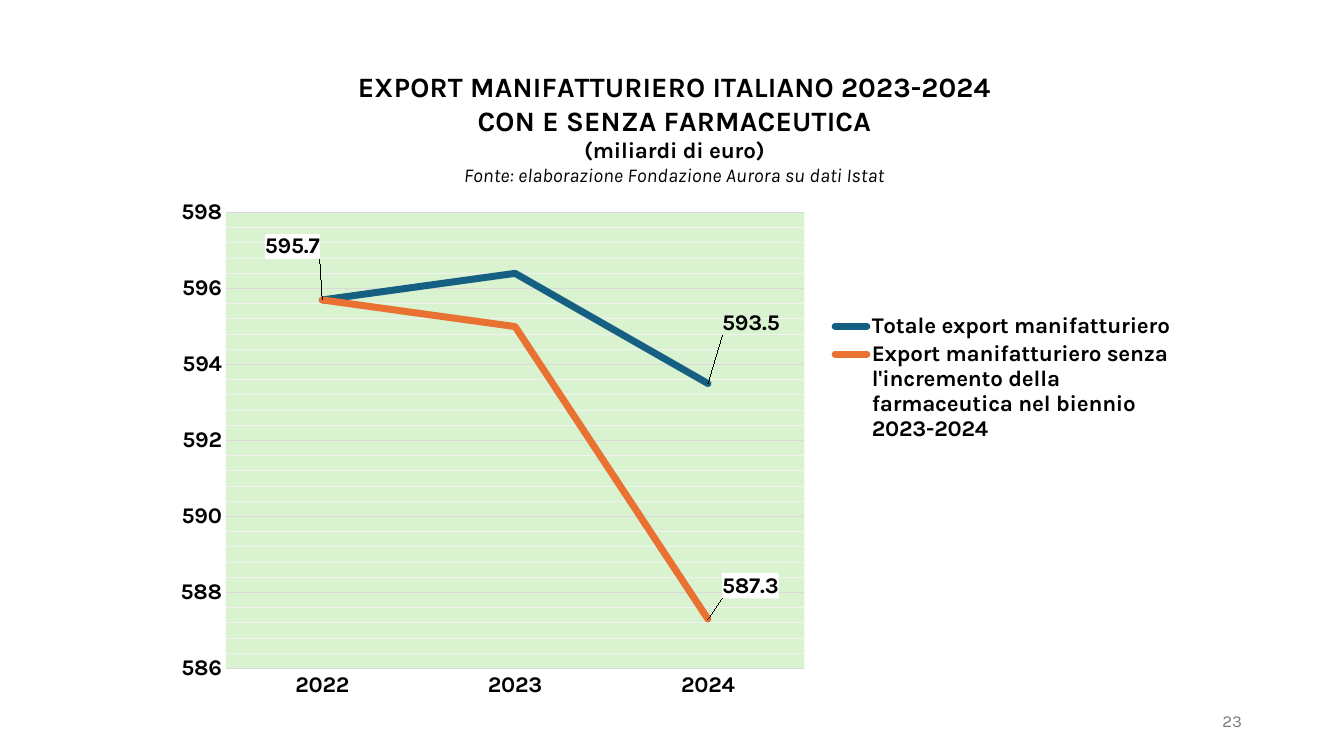
from lxml.etree import SubElement
from pptx import Presentation
from pptx.chart.data import CategoryChartData
from pptx.dml.color import RGBColor
from pptx.enum.chart import XL_CHART_TYPE, XL_LEGEND_POSITION, XL_TICK_MARK
from pptx.enum.text import MSO_ANCHOR, PP_ALIGN
from pptx.oxml import parse_xml
from pptx.oxml.ns import nsdecls, qn
from pptx.util import Cm, Pt

YEARS = ["2022", "2023", "2024"]
TITLE_LINES = [
    ("EXPORT MANIFATTURIERO ITALIANO 2023-2024", dict(size=20, bold=True)),
    ("CON E SENZA FARMACEUTICA", dict(size=20, bold=True)),
    ("(miliardi di euro)", dict(size=16, bold=True)),
    ("Fonte: elaborazione Fondazione Aurora su dati Istat", dict(size=14, italic=True)),
]
# Name, values, colour, labels as (point, horizontal shift, vertical shift, fill)
EXPORTS = [
    ("Totale export manifatturiero", [595.7, 596.4, 593.5], "156082",
     [(2, 0.01, -0.09, None)]),
    ("Export manifatturiero senza l'incremento della farmaceutica nel biennio 2023-2024",
     [595.7, 595.0, 587.3], "E97132",
     [(0, -0.06, -0.08, "FFFFFF"), (2, 0.01, -0.05, "FFFFFF")]),
]
LABEL_EXTENSION = "{CE6537A1-D6FC-4f65-9D91-7224C49458BB}"
C15 = 'xmlns:c15="http://schemas.microsoft.com/office/drawing/2012/chart"'


def colour(code):
    return RGBColor.from_string(code)


def style_font(font, size=16, bold=False, italic=False, code="000000", name="Karla"):
    font.name, font.size, font.bold, font.italic = name, Pt(size), bold, italic
    font.color.rgb = colour(code)


def write(para, text, align=PP_ALIGN.CENTER, **style):
    para.alignment = align
    span = para.add_run()
    span.text = text
    style_font(span.font, **style)


def style_line(line, code, width):
    line.color.rgb = colour(code)
    line.width = Pt(width)


def place(element, inner=False, **fractions):
    """Set a chart part's place as fractions of the chart area."""
    for old in element.findall(qn("c:layout")):
        element.remove(old)
    layout = parse_xml(f'<c:layout {nsdecls("c")}><c:manualLayout/></c:layout>')
    settings = {"layoutTarget": "inner"} if inner else {}
    settings.update(xMode="edge", yMode="edge", **fractions)
    for tag, value in settings.items():
        SubElement(layout[0], qn(f"c:{tag}")).set("val", str(value))
    overlay = element.find(qn("c:overlay"))
    if overlay is None:
        element.insert(0, layout)
    else:
        overlay.addprevious(layout)


def label_flags(show_value):
    shown = {"LegendKey": 0, "Val": show_value, "CatName": 0, "SerName": 0,
             "Percent": 0, "BubbleSize": 0}
    return "".join(f'<c:show{tag} val="{value}"/>' for tag, value in shown.items())


def label_xml(point, shift_x, shift_y, fill):
    paint = f'<a:solidFill><a:srgbClr val="{fill}"/></a:solidFill>' if fill else "<a:noFill/>"
    return (
        f'<c:dLbl><c:idx val="{point}"/><c:layout><c:manualLayout>'
        f'<c:x val="{shift_x}"/><c:y val="{shift_y}"/></c:manualLayout></c:layout>'
        f'<c:numFmt formatCode="0.0" sourceLinked="0"/><c:spPr>{paint}</c:spPr>'
        '<c:txPr><a:bodyPr/><a:p><a:pPr><a:defRPr sz="1600" b="1"><a:solidFill>'
        '<a:srgbClr val="000000"/></a:solidFill><a:latin typeface="Karla"/></a:defRPr>'
        f'</a:pPr></a:p></c:txPr><c:dLblPos val="r"/>{label_flags(1)}</c:dLbl>')


def add_labels(series, labels):
    """Label chosen points, joined to them by thin leader lines."""
    items = "".join(label_xml(*label) for label in labels)
    block = parse_xml(
        f'<c:dLbls {nsdecls("c", "a")}>{items}{label_flags(0)}<c:extLst>'
        f'<c:ext uri="{LABEL_EXTENSION}" {C15}><c15:showLeaderLines val="1"/>'
        '<c15:leaderLines><c:spPr><a:ln w="9525"><a:solidFill><a:srgbClr val="000000"/>'
        '</a:solidFill></a:ln></c:spPr></c15:leaderLines></c:ext></c:extLst></c:dLbls>')
    series._element.find(qn("c:cat")).addprevious(block)


class SlideBuilder:
    def __init__(self, deck):
        self.page = deck.slides.add_slide(deck.slide_layouts[6])

    def text(self, text, left, top, width, height, **style):
        box = self.page.shapes.add_textbox(Cm(left), Cm(top), Cm(width), Cm(height))
        box.text_frame.word_wrap = True
        box.text_frame.vertical_anchor = MSO_ANCHOR.MIDDLE
        write(box.text_frame.paragraphs[0], text, **style)

    def line_chart(self, left, top, width, height):
        data = CategoryChartData(number_format="0.0")
        data.categories = YEARS
        for name, values, *_ in EXPORTS:
            data.add_series(name, values)
        chart = self.page.shapes.add_chart(
            XL_CHART_TYPE.LINE, Cm(left), Cm(top), Cm(width), Cm(height), data).chart
        style_font(chart.font, size=10)
        self.chart_title(chart)
        self.axes(chart)
        self.lines(chart)
        self.legend(chart)

        # Plot area
        plot_area = chart._chartSpace.find(f'{qn("c:chart")}/{qn("c:plotArea")}')
        place(plot_area, inner=True, x=0.064, y=0.253, w=0.565, h=0.681)
        plot_area.append(parse_xml(
            f'<c:spPr {nsdecls("c", "a")}><a:solidFill><a:srgbClr val="D9F2D0"/>'
            '</a:solidFill><a:ln><a:noFill/></a:ln></c:spPr>'))

    def chart_title(self, chart):
        chart.has_title = True
        title = chart.chart_title
        frame = title.text_frame
        for number, (text, style) in enumerate(TITLE_LINES):
            para = frame.add_paragraph() if number else frame.paragraphs[0]
            write(para, text, **style)
        place(title._element, x=0.19, y=0.035)

    def axes(self, chart):
        for axis in (chart.category_axis, chart.value_axis):
            axis.major_tick_mark = axis.minor_tick_mark = XL_TICK_MARK.NONE
            style_font(axis.tick_labels.font, bold=True)
        style_line(chart.category_axis.format.line, "D9D9D9", 0.75)

        values = chart.value_axis
        values.minimum_scale, values.maximum_scale = 586, 598
        values.major_unit, values.minor_unit = 2, 0.4
        values.has_major_gridlines = values.has_minor_gridlines = True
        style_line(values.major_gridlines.format.line, "D9D9D9", 0.75)
        values._element.find(qn("c:minorGridlines")).append(parse_xml(
            f'<c:spPr {nsdecls("c", "a")}><a:ln w="9525"><a:solidFill>'
            '<a:srgbClr val="F2F2F2"/></a:solidFill></a:ln></c:spPr>'))
        values.format.line.fill.background()
        values.tick_labels.number_format = "#,##0"
        values.tick_labels.number_format_is_linked = False

    def lines(self, chart):
        plot = chart.plots[0]
        plot.vary_by_categories = False
        for series, (_, _, code, labels) in zip(plot.series, EXPORTS):
            series.smooth = False
            style_line(series.format.line, code, 5)
            series._element.find(f'{qn("c:spPr")}/{qn("a:ln")}').set("cap", "rnd")
            add_labels(series, labels)

    def legend(self, chart):
        chart.has_legend = True
        chart.legend.position = XL_LEGEND_POSITION.RIGHT
        chart.legend.include_in_layout = False
        style_font(chart.legend.font, bold=True)
        place(chart.legend._element, x=0.65, y=0.4, w=0.345, h=0.2)


def main():
    deck = Presentation()
    deck.slide_width, deck.slide_height = Cm(33.87), Cm(19.05)
    slide = SlideBuilder(deck)
    slide.line_chart(4.04, 1.09, 25.81, 16.87)
    # Page number
    slide.text("23", 23.93, 17.65, 7.62, 1.02, align=PP_ALIGN.RIGHT, size=12, code="797979")
    deck.save("out.pptx")


if __name__ == "__main__":
    main()
